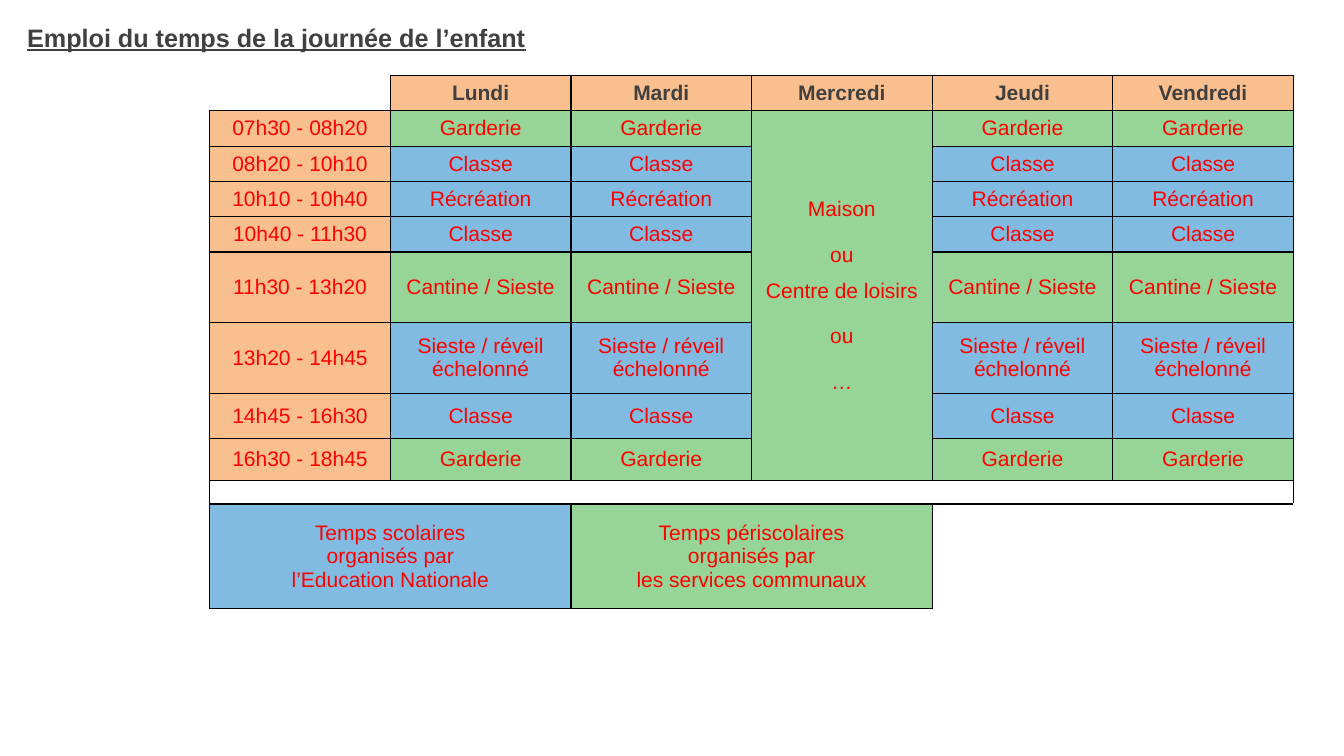
import dataclasses

import lxml.etree
import pptx
import pptx.dml.color
import pptx.enum.text
import pptx.oxml.ns
import pptx.util

Inches = pptx.util.Inches
Pt = pptx.util.Pt
qn = pptx.oxml.ns.qn
Align = pptx.enum.text.PP_ALIGN
Anchor = pptx.enum.text.MSO_ANCHOR


@dataclasses.dataclass(frozen=True)
class Theme:
    face: str = "Arial"
    ink: str = "404040"
    red: str = "FF0000"
    line: str = "000000"
    head: str = "FABF8F"
    school: str = "82BBE1"
    care: str = "96D497"
    blank: str = "FFFFFF"
    title: int = 18
    body: int = 15
    small: int = 8


theme = Theme()

DAYS = ["Lundi", "Mardi", "Mercredi", "Jeudi", "Vendredi"]
SLOTS = [
    ("07h30 - 08h20", "Garderie", theme.care, 0.35),
    ("08h20 - 10h10", "Classe", theme.school, 0.35),
    ("10h10 - 10h40", "Récréation", theme.school, 0.35),
    ("10h40 - 11h30", "Classe", theme.school, 0.35),
    ("11h30 - 13h20", "Cantine / Sieste", theme.care, 0.7),
    ("13h20 - 14h45", "Sieste / réveil échelonné", theme.school, 0.7),
    ("14h45 - 16h30", "Classe", theme.school, 0.45),
    ("16h30 - 18h45", "Garderie", theme.care, 0.42),
]
HEAD, GAP, KEY = 0.35, 0.23, 1.04
FREE = ["Maison", "ou", "Centre de loisirs", "ou", "…"]
SPACES = [0, 16, 9, 16, 16]
KEYS = [
    (0, theme.school, ["Temps scolaires", "organisés par", "l’Education Nationale"]),
    (2, theme.care, ["Temps périscolaires", "organisés par", "les services communaux"]),
]


def apply(item, values):
    for name, value in values.items():
        setattr(item, name, value)


def style(font, size, color, **more):
    apply(font, {"name": theme.face, "size": Pt(size), **more})
    font.color.rgb = pptx.dml.color.RGBColor.from_string(color)


def edge(cell, sides):
    props = cell._tc.get_or_add_tcPr()
    for side in sides:
        line = lxml.etree.SubElement(props, qn("a:ln" + side), w=str(Pt(1)))
        fill = lxml.etree.SubElement(line, qn("a:solidFill"))
        lxml.etree.SubElement(fill, qn("a:srgbClr"), val=theme.line)


def paint(cell, tone, sides="LRTB"):
    apply(cell, {
        "margin_left": Inches(0.06),
        "margin_right": Inches(0.06),
        "margin_top": 0,
        "margin_bottom": 0,
        "vertical_anchor": Anchor.MIDDLE,
    })
    edge(cell, sides)
    if tone:
        cell.fill.solid()
        cell.fill.fore_color.rgb = pptx.dml.color.RGBColor.from_string(tone)
    else:
        cell.fill.background()


def write(cell, lines, color=theme.red, bold=False, spaces=None):
    frame = cell.text_frame
    for spot, text in enumerate(lines):
        para = frame.add_paragraph() if spot else frame.paragraphs[0]
        para.alignment = Align.CENTER
        if spot and spaces:
            para.space_before = Pt(spaces[spot])
        run = para.add_run()
        run.text = text
        style(run.font, theme.body, color, bold=bold)


def shrink(cell):
    para = cell.text_frame.paragraphs[0]
    lxml.etree.SubElement(para._p, qn("a:endParaRPr"), sz=str(theme.small * 100))


def add_title(slide, left, top, width, height):
    box = slide.shapes.add_textbox(*map(Inches, (left, top, width, height)))
    box.text_frame.word_wrap = True
    run = box.text_frame.paragraphs[0].add_run()
    run.text = "Emploi du temps de la journée de l’enfant"
    style(run.font, theme.title, theme.ink, bold=True, underline=True)


def add_week(slide, left, top, width):
    highs = [HEAD, *(slot[3] for slot in SLOTS), GAP, KEY]
    count = len(DAYS) + 1
    box = map(Inches, (left, top, width, sum(highs)))
    table = slide.shapes.add_table(len(highs), count, *box).table
    apply(table, {"first_row": False, "horz_banding": False})
    for column in table.columns:
        column.width = Inches(width / count)
    for row, high in zip(table.rows, highs):
        row.height = Inches(high)

    paint(table.cell(0, 0), None, "RB")
    shrink(table.cell(0, 0))
    for col, day in enumerate(DAYS, 1):
        paint(table.cell(0, col), theme.head)
        write(table.cell(0, col), [day], theme.ink, True)

    free = DAYS.index("Mercredi") + 1
    for row, (time, text, tone, _) in enumerate(SLOTS, 1):
        paint(table.cell(row, 0), theme.head)
        write(table.cell(row, 0), [time])
        for col in range(1, count):
            paint(table.cell(row, col), theme.care if col == free else tone)
            if col != free:
                write(table.cell(row, col), [text])
    write(table.cell(1, free), FREE, spaces=SPACES)
    table.cell(1, free).merge(table.cell(len(SLOTS), free))

    gap = len(SLOTS) + 1
    for col in range(count):
        paint(table.cell(gap, col), theme.blank)
        shrink(table.cell(gap, col))
    table.cell(gap, 0).merge(table.cell(gap, count - 1))

    last = gap + 1
    for col, tone, lines in KEYS:
        for step in range(2):
            paint(table.cell(last, col + step), tone)
        write(table.cell(last, col), lines)
        table.cell(last, col).merge(table.cell(last, col + 1))
    paint(table.cell(last, 4), None, "LT")
    paint(table.cell(last, 5), None, "T")
    table.cell(last, 4).merge(table.cell(last, 5))


def main():
    deck = pptx.Presentation()
    apply(deck, {"slide_width": Inches(13.33), "slide_height": Inches(7.5)})
    slide = deck.slides.add_slide(deck.slide_layouts[6])
    add_week(slide, 2.08, 0.75, 10.75)
    add_title(slide, 0.17, 0.17, 6.42, 0.4)
    deck.save("out.pptx")


if __name__ == "__main__":
    main()
